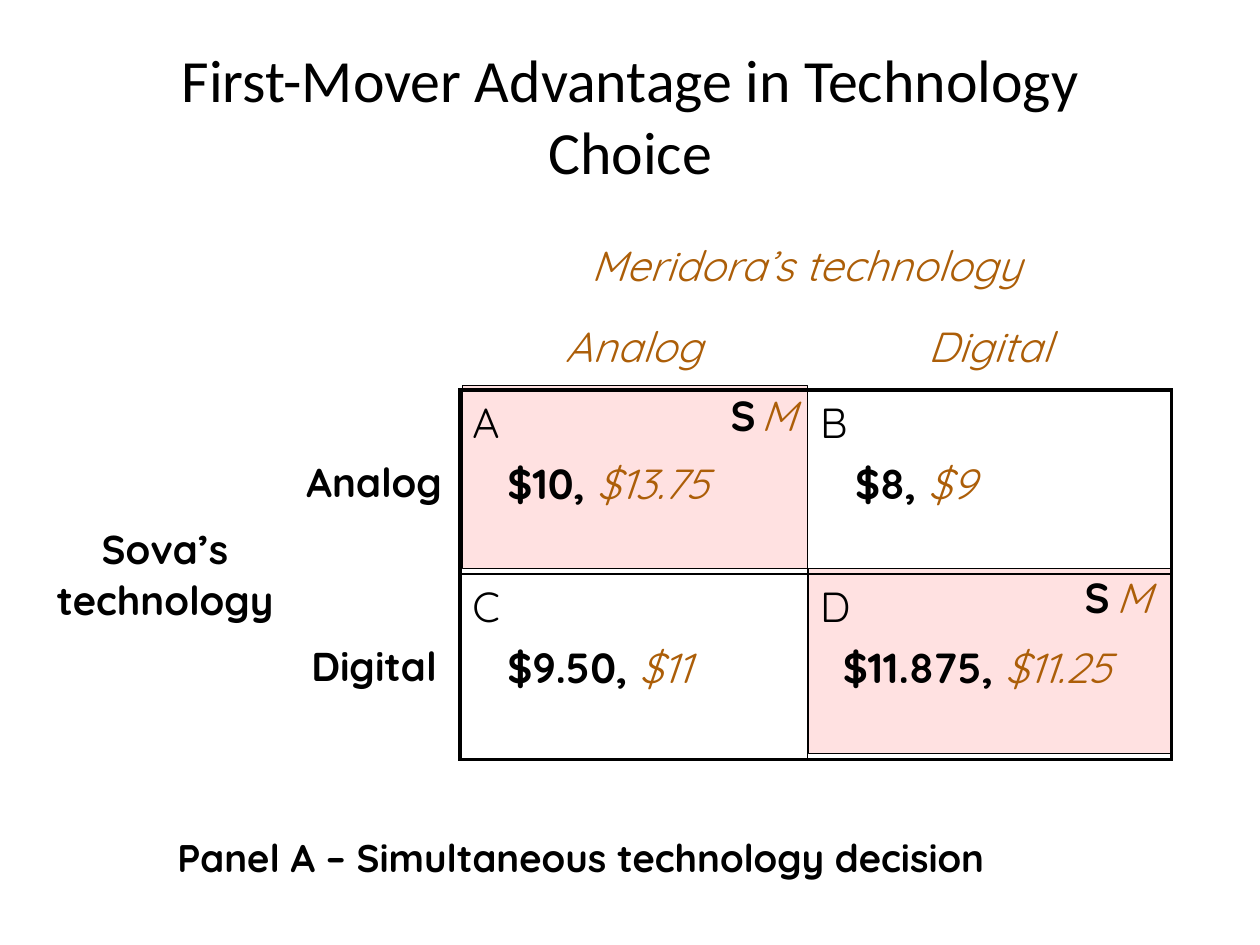
from pptx import Presentation
from pptx.dml.color import RGBColor
from pptx.enum.shapes import MSO_SHAPE
from pptx.enum.text import MSO_ANCHOR, MSO_AUTO_SIZE, PP_ALIGN
from pptx.oxml.ns import qn
from pptx.util import Pt
from lxml import etree

RECT = MSO_SHAPE.RECTANGLE
MIDDLE, TOP = MSO_ANCHOR.MIDDLE, MSO_ANCHOR.TOP
CENTER, LEFT = PP_ALIGN.CENTER, PP_ALIGN.LEFT
FIXED = MSO_AUTO_SIZE.NONE
COLORS = {"ink": "000000", "amber": "AC5E08", "pink": "FFC5C5", "white": "FFFFFF"}
COLS = (87.1, 54, 97.9, 198.7, 208.1)
ROWS = (46.6, 43.2, 105.1, 105.8)
UPRIGHT = {3: 2.25, 4: 1, 5: 2.25}
LEVEL = {2: 2.25, 3: 1, 4: 2.25}
PAYOFFS = (
    (2, 3, "A", "$10, ", "$13.75", 20),
    (2, 4, "B", "$8, ", "$9", 20),
    (3, 3, "C", "$9.50, ", "$11", 20),
    (3, 4, "D", "$11.875, ", "$11.25", 13),
)


def color(name):
    """Return the named colour."""
    return RGBColor.from_string(COLORS[name])


def style(run, size=24, tone="ink", bold=False, slant=False, face="Quicksand"):
    """Format one run."""
    font = run.font
    font.name, font.size, font.bold, font.italic = face, Pt(size), bold, slant
    font.color.rgb = color(tone)


def write(para, text, align=LEFT, **look):
    """Set and format a paragraph of one run."""
    para.text = text
    para.alignment = align
    style(para.runs[0], **look)


def title(slide, box, text):
    """Fill the title placeholder."""
    shape = slide.shapes.title
    shape.left, shape.top, shape.width, shape.height = map(Pt, box)
    frame = shape.text_frame
    frame.auto_size, frame.vertical_anchor = FIXED, MIDDLE
    write(frame.paragraphs[0], text, CENTER, size=34.2, face="Calibri")


def shade(slide, box):
    """Draw a translucent pink panel."""
    shape = slide.shapes.add_shape(RECT, *map(Pt, box))
    shape.shadow.inherit = False
    shape.fill.solid()
    shape.fill.fore_color.rgb = color("pink")
    tint = shape.fill._xPr.find(qn("a:solidFill"))[0]
    etree.SubElement(tint, qn("a:alpha"), val="50000")
    shape.line.color.rgb = color("ink")
    shape.line.width = Pt(0.75)


def label(slide, box, text, **look):
    """Place a line of text."""
    shape = slide.shapes.add_textbox(*map(Pt, box))
    shape.text_frame.word_wrap = True
    write(shape.text_frame.paragraphs[0], text, **look)
    return shape


def edge(cell, side, width):
    """Set one border of a cell, where zero means none."""
    line = etree.SubElement(cell._tc.get_or_add_tcPr(), qn("a:" + side))
    if width:
        line.set("w", str(Pt(width)))
        fill = etree.SubElement(line, qn("a:solidFill"))
        etree.SubElement(fill, qn("a:srgbClr"), val=COLORS["ink"])
    else:
        etree.SubElement(line, qn("a:noFill"))


def rule(table):
    """Clear the fills and rule the two-by-two block."""
    for row in range(len(ROWS)):
        for col in range(len(COLS)):
            cell = table.cell(row, col)
            for side, step in (("lnL", 0), ("lnR", 1)):
                edge(cell, side, UPRIGHT.get(col + step, 0) if row >= 2 else 0)
            for side, step in (("lnT", 0), ("lnB", 1)):
                edge(cell, side, LEVEL.get(row + step, 0) if col >= 3 else 0)
            cell.fill.background()


def head(cell, text, anchor=MIDDLE, **look):
    """Write a centred heading in a cell."""
    write(cell.text_frame.paragraphs[0], text, CENTER, **look)
    cell.vertical_anchor = anchor


def payoff(cell, name, own, other, indent):
    """Write the letter and both payoffs of an outcome."""
    frame = cell.text_frame
    write(frame.paragraphs[0], name)
    para = frame.add_paragraph()
    para.space_before = Pt(5)
    para._p.get_or_add_pPr().set("marL", str(Pt(indent)))
    write(para, own, bold=True)
    run = para.add_run()
    run.text = other
    style(run, tone="amber", slant=True)


def matrix(slide, box):
    """Build the payoff table."""
    table = slide.shapes.add_table(len(ROWS), len(COLS), *map(Pt, box)).table
    table.first_row = table.horz_banding = False
    for col, width in zip(table.columns, COLS):
        col.width = Pt(width)
    for row, height in zip(table.rows, ROWS):
        row.height = Pt(height)
    rule(table)
    for first, last in (((0, 1), (0, 4)), ((1, 0), (1, 1)), ((2, 0), (3, 1))):
        table.cell(*first).merge(table.cell(*last))
    rival = table.cell(0, 1)
    head(rival, "Meridora’s technology", TOP, tone="amber", slant=True)
    rival.margin_left = Pt(148)
    rival.text_frame.paragraphs[0].space_before = Pt(4)
    head(table.cell(2, 0), "Sova’s technology", size=23, bold=True)
    for step, text in enumerate(("Analog", "Digital")):
        head(table.cell(1, 3 + step), text, TOP, tone="amber", slant=True)
        head(table.cell(2 + step, 2), text, size=23, bold=True)
    for row, col, *parts in PAYOFFS:
        payoff(table.cell(row, col), *parts)


def marks(slide, left, top, gap):
    """Place the S and M marks of a favoured outcome."""
    label(slide, (left, top, 29.5, 36), "S", bold=True)
    label(slide, (left + gap, top, 36, 36), "M", tone="amber", slant=True)


def main():
    """Build and save the deck."""
    deck = Presentation()
    deck.slide_width, deck.slide_height = Pt(720), Pt(540)
    slide = deck.slides.add_slide(deck.slide_layouts[5])
    shade(slide, (462.2, 324.7, 208, 105.8))
    shade(slide, (264.2, 220.3, 197.3, 104.4))
    matrix(slide, (23.8, 133.2, sum(COLS), sum(ROWS)))
    title(slide, (60, 32.4, 600, 66.2), "First-Mover Advantage in Technology Choice")
    note = label(slide, (94.3, 473, 498.2, 33.8),
                 "Panel A – Simultaneous technology decision", size=22, bold=True)
    note.fill.solid()
    note.fill.fore_color.rgb = color("white")
    marks(slide, 410.4, 218.9, 17.3)
    marks(slide, 612.7, 323, 18)
    deck.save("out.pptx")


if __name__ == "__main__":
    main()
